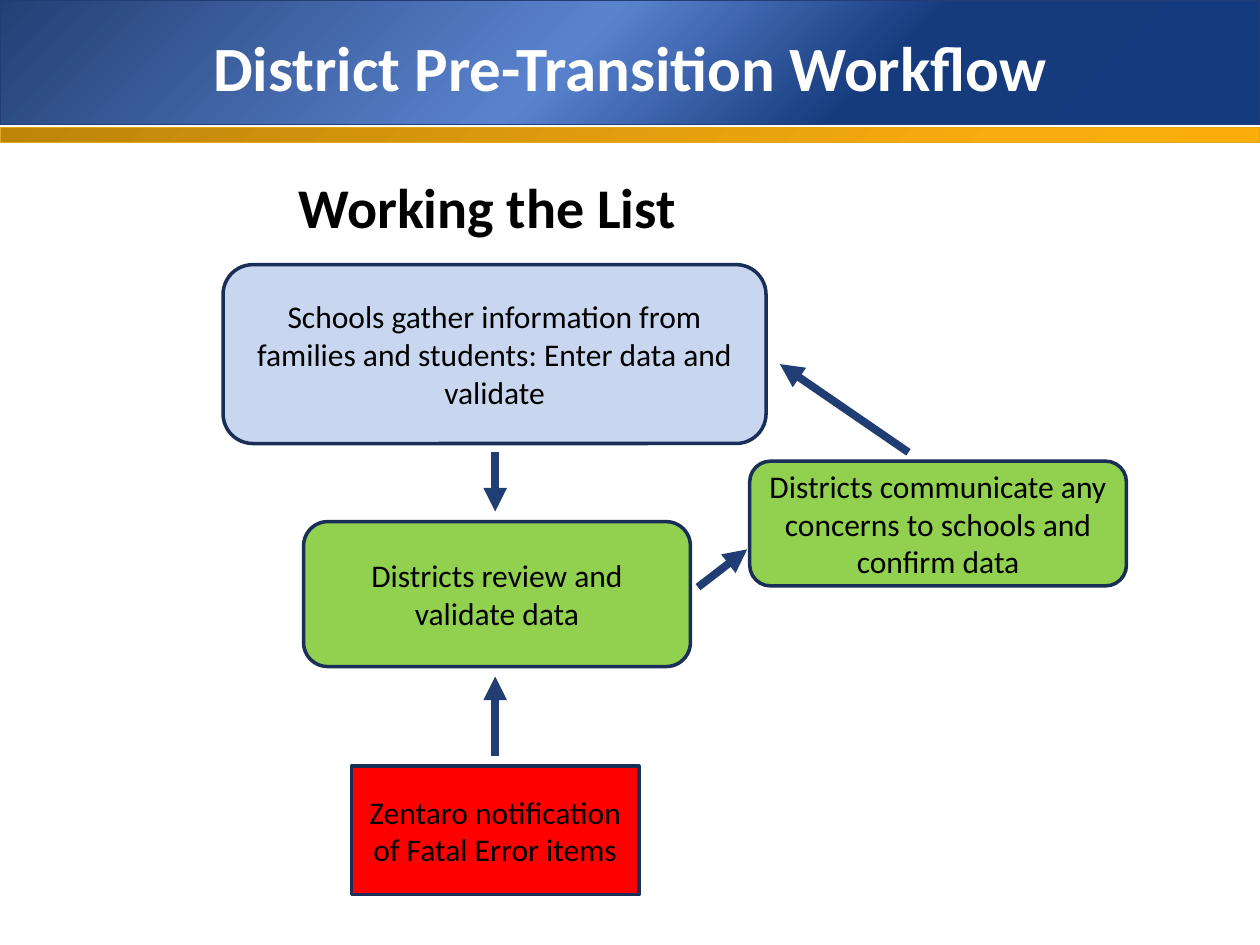
import pptx
import pptx.dml.color
import pptx.enum.shapes
import pptx.enum.text
import pptx.oxml
import pptx.oxml.ns
import pptx.util
from pptx.util import Inches

SHAPES = pptx.enum.shapes.MSO_SHAPE
CENTER = pptx.enum.text.PP_ALIGN.CENTER
LEFT = pptx.enum.text.PP_ALIGN.LEFT
MIDDLE = pptx.enum.text.MSO_ANCHOR.MIDDLE
TOP = pptx.enum.text.MSO_ANCHOR.TOP
NAMESPACE = pptx.oxml.ns.nsdecls("a")


def color(value):
    return pptx.dml.color.RGBColor.from_string(value)


class Workflow:
    font = "Calibri"
    outline = "1A2F57"
    arrow_color = "203E74"
    district = "92D050"

    def __init__(self, page):
        self.page = page

    def add_text(self, box, text, size, ink="000000", bold=False, align=CENTER, anchor=MIDDLE):
        frame = box.text_frame
        frame.word_wrap = True
        frame.vertical_anchor = anchor
        para = frame.paragraphs[0]
        para.alignment = align
        span = para.add_run()
        span.text = text
        span.font.name = self.font
        span.font.size = pptx.util.Pt(size)
        span.font.bold = bold
        span.font.color.rgb = color(ink)

    def shape(self, kind, left, top, width, height, line, weight):
        box = self.page.shapes.add_shape(
            kind, Inches(left), Inches(top), Inches(width), Inches(height))
        box.shadow.inherit = False
        box.line.color.rgb = color(line)
        box.line.width = pptx.util.Pt(weight)
        return box

    def band(self, top, height, stops, line):
        """Draw a full-width header strip with a diagonal gradient."""
        box = self.shape(SHAPES.RECTANGLE, 0, top, 10, height, line, 0.75)
        box.fill.gradient()
        box.fill.gradient_angle = 315
        stop_list = next(box._element.iter(pptx.oxml.ns.qn("a:gsLst")))
        for old_stop in list(stop_list):
            stop_list.remove(old_stop)
        for percent, value in stops:
            stop_list.append(pptx.oxml.parse_xml(
                f'<a:gs {NAMESPACE} pos="{percent * 1000}"><a:srgbClr val="{value}"/></a:gs>'))

    def title(self, text):
        box = self.page.shapes.title
        box.left, box.top = Inches(0.5), Inches(0.14)
        box.width, box.height = Inches(9), Inches(0.77)
        self.add_text(box, text, 36, "FFFFFF", True)
        self.page.shapes._spTree.append(box._element)  # in front of the bands

    def heading(self, text, left, top, width, height):
        box = self.page.shapes.add_textbox(
            Inches(left), Inches(top), Inches(width), Inches(height))
        self.add_text(box, text, 32, bold=True, align=LEFT, anchor=TOP)

    def step(self, text, left, top, width, height, fill, kind=SHAPES.ROUNDED_RECTANGLE):
        box = self.shape(kind, left, top, width, height, self.outline, 2)
        box.fill.solid()
        box.fill.fore_color.rgb = color(fill)
        self.add_text(box, text, 18)

    def arrow(self, start, end):
        connector = self.page.shapes.add_connector(
            pptx.enum.shapes.MSO_CONNECTOR.STRAIGHT,
            *(Inches(value) for value in start + end))
        connector.line.color.rgb = color(self.arrow_color)
        connector.line.width = pptx.util.Pt(4.5)
        connector.line._get_or_add_ln().append(
            pptx.oxml.parse_xml(f'<a:tailEnd {NAMESPACE} type="triangle"/>'))
        connector._element.spPr.append(pptx.oxml.parse_xml(f"<a:effectLst {NAMESPACE}/>"))


def main():
    deck = pptx.Presentation()
    deck.slide_width, deck.slide_height = Inches(10), Inches(7.5)
    flow = Workflow(deck.slides.add_slide(deck.slide_layouts[5]))

    flow.band(0, 0.99, [(0, "234075"), (45, "5A83CE"), (69, "163B7D"), (100, "143A80")], "203E74")
    flow.band(1.01, 0.12, [(0, "BE850B"), (80, "F7AC0F"), (100, "FCAF0B")], "E2A626")
    flow.title("District Pre-Transition Workflow")

    flow.step("Schools gather information from families and students: Enter data and validate",
              1.77, 2.1, 4.31, 1.42, "C8D6EF")
    flow.step("Districts review and validate data", 2.41, 4.14, 3.07, 1.15, flow.district)
    flow.step("Districts communicate any concerns to schools and confirm data",
              5.95, 3.66, 2.99, 0.99, flow.district)
    flow.step("Zentaro notification of Fatal Error items",
              2.79, 6.08, 2.28, 1.02, "FF0000", SHAPES.FLOWCHART_PROCESS)
    flow.heading("Working the List", 2.27, 1.32, 3.32, 0.64)

    middle = 3.93
    flow.arrow((middle, 3.59), (middle, 4.06))
    flow.arrow((middle, 6), (middle, 5.37))
    flow.arrow((5.54, 4.66), (5.93, 4.36))
    flow.arrow((7.21, 3.59), (6.19, 2.89))

    deck.save("out.pptx")


if __name__ == "__main__":
    main()
